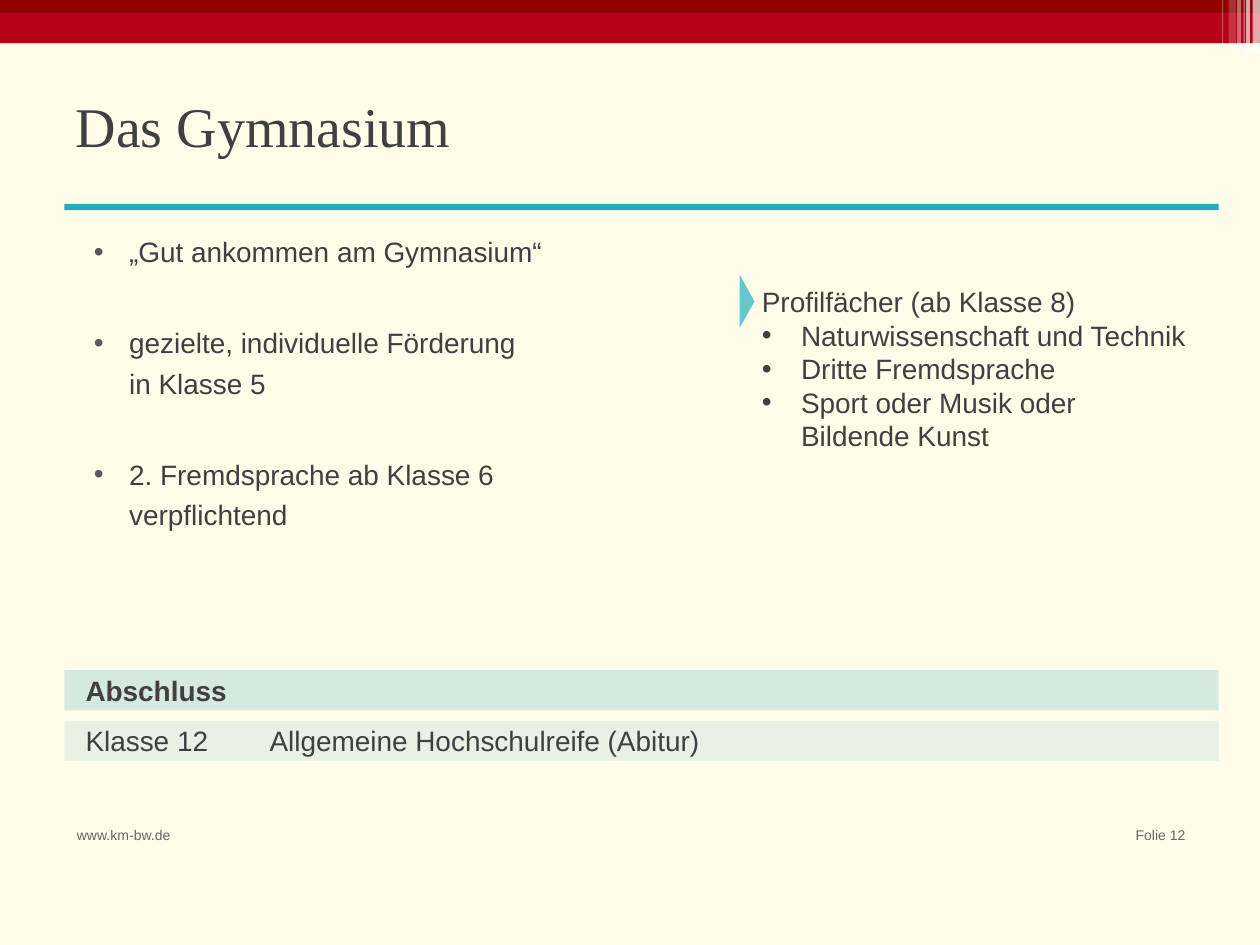
"""Build the slide about the Gymnasium school type."""
from lxml.etree import SubElement
from pptx import Presentation
from pptx.dml.color import RGBColor
from pptx.enum.shapes import MSO_SHAPE
from pptx.enum.text import MSO_ANCHOR, MSO_AUTO_SIZE, PP_ALIGN
from pptx.oxml.ns import qn
from pptx.util import Cm, Pt

TEXT = "404040"
GREY = "646464"
TEAL = "1EAEBD"
BLUE = "1E90BC"
WHITE = "FFFFFF"


def add_block(page, left, top, width, height, color=None, opacity=100, kind=MSO_SHAPE.RECTANGLE):
    """Add a borderless shape, unfilled when no colour is given."""
    block = page.shapes.add_shape(kind, Cm(left), Cm(top), Cm(width), Cm(height))
    block.shadow.inherit = False
    block.line.fill.background()
    if color is None:
        block.fill.background()
        return block
    block.fill.solid()
    block.fill.fore_color.rgb = RGBColor.from_string(color)
    if opacity < 100:
        tint = block.fill._xPr.find(qn("a:solidFill"))[0]
        SubElement(tint, qn("a:alpha"), val=str(opacity * 1000))
    return block


def write(paragraph, text, size=16, color=TEXT, font="Arial", bold=False, bullet=None, indent=0):
    """Fill a paragraph run by run, with an optional bullet in the given colour."""
    if bullet:
        properties = paragraph._p.get_or_add_pPr()
        properties.set("marL", str(Cm(indent)))
        properties.set("indent", str(-Cm(0.71 if indent > 0.9 else indent)))
        SubElement(SubElement(properties, qn("a:buClr")), qn("a:srgbClr"), val=bullet)
        SubElement(properties, qn("a:buFont"), typeface="Arial")
        SubElement(properties, qn("a:buChar"), char="•")
    paragraph.alignment = PP_ALIGN.LEFT
    for number, line in enumerate(text.split("\n")):
        if number:
            paragraph.add_line_break()
        span = paragraph.add_run()
        span.text = line
        span.font.name = font
        span.font.size = Pt(size)
        span.font.bold = bold
        span.font.color.rgb = RGBColor.from_string(color)


deck = Presentation()
deck.slide_width, deck.slide_height = Cm(25.4), Cm(19.05)
page = deck.slides.add_slide(deck.slide_layouts[1])
page.background.fill.solid()
page.background.fill.fore_color.rgb = RGBColor.from_string("FFFDE9")

add_block(page, 0, 0, 25.4, 0.87, "B70017")
add_block(page, 0, 0, 25.4, 0.26, "920000")
stripes = [
    (25.12, 0.08, 1.09, 65),
    (25.25, 0.15, 1.09, 65),
    (24.64, 0.02, 1.63, 30),
    (25.07, 0.02, 1.73, 60),
    (24.77, 0.15, 1.09, 20),
    (24.94, 0.08, 1.09, 40),
]
for left, width, height, opacity in stripes:
    add_block(page, left, 0, width, height, WHITE, opacity)

for top, opacity in [(13.51, 18), (14.53, 10)]:
    add_block(page, 1.3, top, 23.27, 0.81, BLUE, opacity)

footers = [
    (1.3, 2.54, "www.km-bw.de", PP_ALIGN.LEFT),
    (21.69, 2.46, "Folie 12", PP_ALIGN.RIGHT),
]
for left, width, text, alignment in footers:
    box = page.shapes.add_textbox(Cm(left), Cm(16.54), Cm(width), Cm(0.99))
    box.text_frame.word_wrap = True
    write(box.text_frame.paragraphs[0], text, 8, GREY)
    box.text_frame.paragraphs[0].alignment = alignment

title = page.shapes.title
title.left, title.top, title.width, title.height = Cm(1.27), Cm(1.55), Cm(22.86), Cm(1.96)
title.text_frame.auto_size = MSO_AUTO_SIZE.NONE
title.text_frame.vertical_anchor = MSO_ANCHOR.MIDDLE
write(title.text_frame.paragraphs[0], "Das Gymnasium", 32, font="Times New Roman")

body = page.placeholders[1]
body.left, body.top, body.width, body.height = Cm(1.35), Cm(3.66), Cm(12.4), Cm(7.39)
frame = body.text_frame
frame.auto_size = MSO_AUTO_SIZE.NONE
frame.vertical_anchor = MSO_ANCHOR.TOP
frame.margin_top, frame.margin_right = Cm(0.94), Cm(1.5)
points = [
    "„Gut ankommen am Gymnasium“",
    "gezielte, individuelle Förderung\nin Klasse 5",
    "2. Fremdsprache ab Klasse 6 verpflichtend",
]
for number, text in enumerate(points):
    paragraph = frame.add_paragraph() if number else frame.paragraphs[0]
    write(paragraph, text, bullet="595959", indent=1.0)
    paragraph.line_spacing = 1.2
    paragraph.space_before = Pt(29 if number else 0)

table_frame = page.shapes.add_table(2, 2, Cm(1.47), Cm(13.51), Cm(21.41), Cm(2))
table = table_frame.table
table.first_row = table.horz_banding = False
table._tbl.tblPr.find(qn("a:tableStyleId")).text = "{2D5ABB26-0587-4C30-8999-92F81FD0307C}"
table.columns[0].width, table.columns[1].width = Cm(3.71), Cm(17.7)
for row in table.rows:
    row.height = Cm(1)
for cell in table.iter_cells():
    cell.fill.background()
table.cell(0, 0).merge(table.cell(0, 1))
entries = [
    (0, 0, "Abschluss"),
    (1, 0, "Klasse 12"),
    (1, 1, "Allgemeine Hochschulreife (Abitur)"),
]
for row, column, text in entries:
    write(table.cell(row, column).text_frame.paragraphs[0], text, bold=row == 0)

profile = add_block(page, 15.11, 5.13, 10.01, 4.6, kind=MSO_SHAPE.ROUNDED_RECTANGLE)
profile.adjustments[0] = 0
frame = profile.text_frame
frame.word_wrap = True
frame.vertical_anchor = MSO_ANCHOR.MIDDLE
write(frame.paragraphs[0], "Profilfächer (ab Klasse 8)")
for subject in [
    "Naturwissenschaft und Technik",
    "Dritte Fremdsprache",
    "Sport oder Musik oder\nBildende Kunst",
]:
    write(frame.add_paragraph(), subject, bullet=TEXT, indent=0.79)

add_block(page, 1.3, 4.11, 23.27, 0.13, TEAL)
marker = add_block(page, 14.91, 5.54, 0.3, 1.07, TEAL, 68, MSO_SHAPE.PENTAGON)
marker.adjustments[0] = 0.99

deck.save("out.pptx")
